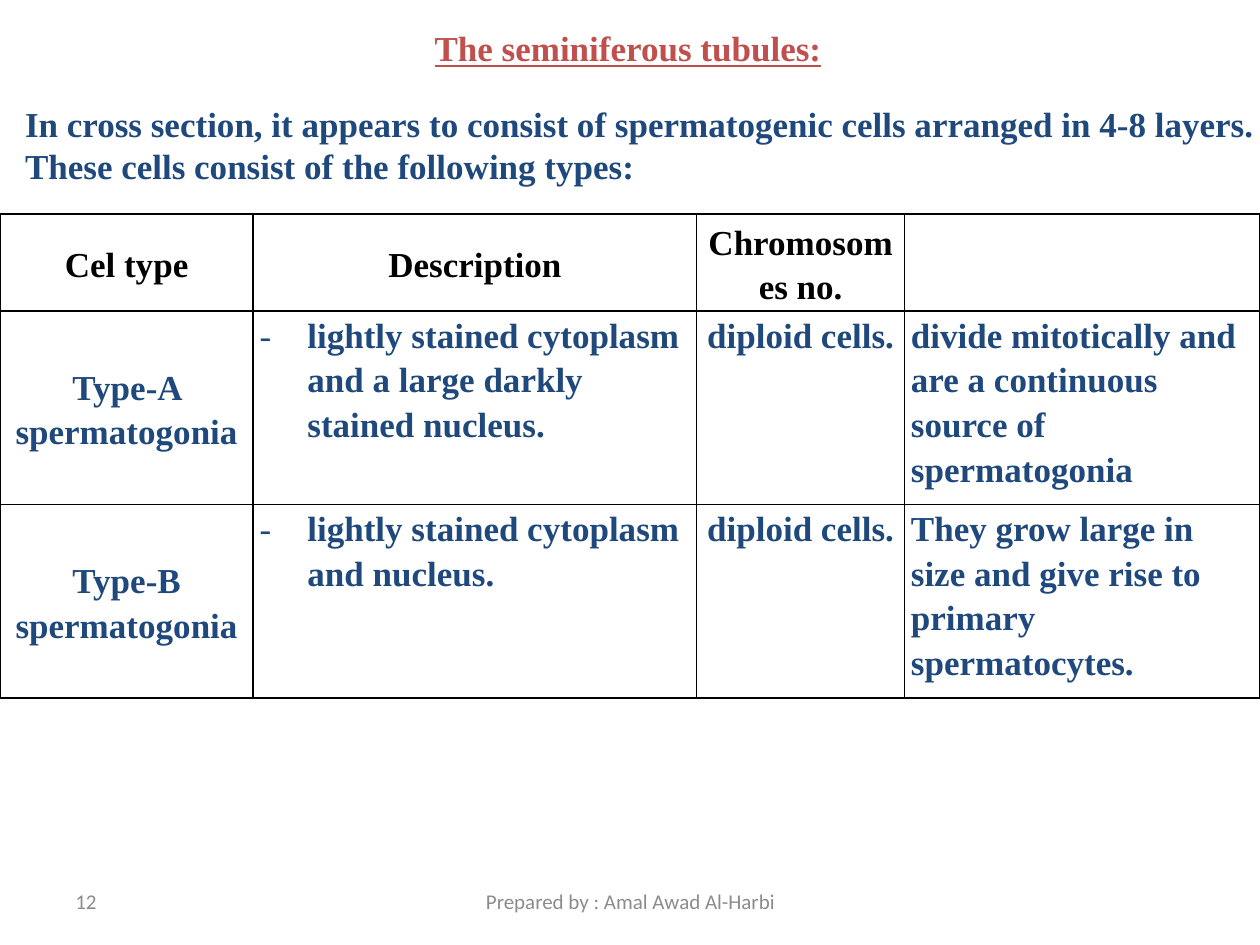
from lxml.etree import SubElement
from pptx import Presentation
from pptx.dml.color import RGBColor
from pptx.enum.text import MSO_ANCHOR, PP_ALIGN
from pptx.oxml import parse_xml
from pptx.oxml.ns import nsdecls, qn
from pptx.util import Inches, Pt

SERIF = "Times New Roman"
BLACK, NAVY, RED, GRAY = "000000", "1F497D", "C0504D", "8C8C8C"
COLS = [2.01, 3.52, 1.65, 2.82]
ROWS = [0.77, 1.53, 1.53]
CELLS = [
    ["Cel type", "Description", "Chromosomes no.", ""],
    ["Type-A spermatogonia",
     "lightly stained cytoplasm and a large darkly stained nucleus.",
     "diploid cells.",
     "divide mitotically and are a continuous source of spermatogonia"],
    ["Type-B spermatogonia",
     "lightly stained cytoplasm and nucleus.",
     "diploid cells.",
     "They grow large in size and give rise to primary spermatocytes."],
]


def rgb(color):
    return RGBColor.from_string(color)


def style(p, size, color, name=SERIF, bold=True, underline=False):
    for r in p.runs:
        font = r.font
        font.size, font.name, font.bold = Pt(size), name, bold
        font.color.rgb = rgb(color)
        if underline:
            font.underline = True


def add_text(s, box, text, size, color, align=PP_ALIGN.LEFT, wrap=True, **font):
    tf = s.shapes.add_textbox(*map(Inches, box)).text_frame
    tf.word_wrap = wrap
    tf.vertical_anchor = MSO_ANCHOR.MIDDLE
    tf.text = text
    for p in tf.paragraphs:
        p.alignment = align
        style(p, size, color, **font)


def add_dash(p):
    pPr = p._p.get_or_add_pPr()
    pPr.set("marL", str(Inches(0.38)))
    pPr.set("indent", str(-Inches(0.38)))
    SubElement(pPr, qn("a:buFont"), typeface=SERIF)
    SubElement(pPr, qn("a:buChar"), char="-")


def add_borders(cell):
    tcPr = cell._tc.get_or_add_tcPr()
    for i, side in enumerate("LRTB"):
        tcPr.insert(i, parse_xml(
            f'<a:ln{side} {nsdecls("a")} w="{Pt(1)}"><a:solidFill>'
            f'<a:srgbClr val="{BLACK}"/></a:solidFill></a:ln{side}>'))


def fill_cell(cell, text, row, col):
    cell.fill.background()
    add_borders(cell)
    cell.margin_left = cell.margin_right = Inches(0.05)
    cell.margin_top = cell.margin_bottom = 0
    middle = row == 0 or col == 0
    cell.vertical_anchor = MSO_ANCHOR.MIDDLE if middle else MSO_ANCHOR.TOP
    p = cell.text_frame.paragraphs[0]
    p.text = text
    p.alignment = PP_ALIGN.CENTER if middle or col == 2 else PP_ALIGN.LEFT
    p.line_spacing = 1.15
    if row and col == 1:
        add_dash(p)
    style(p, 20, BLACK if row == 0 else NAVY)


def add_cell_table(s, box):
    table = s.shapes.add_table(len(ROWS), len(COLS), *map(Inches, box)).table
    table.first_row = table.horz_banding = False
    for column, width in zip(table.columns, COLS):
        column.width = Inches(width)
    for row, height in zip(table.rows, ROWS):
        row.height = Inches(height)
    for i, texts in enumerate(CELLS):
        for j, text in enumerate(texts):
            fill_cell(table.cell(i, j), text, i, j)


def add_heading(s):
    add_text(s, (3.35, 0.16, 3.31, 0.44), "The seminiferous tubules:",
             20, RED, underline=True)
    add_text(s, (0.1, 0.76, 10.02, 0.77),
             "In cross section, it appears to consist of spermatogenic cells "
             "arranged in 4-8 layers.\n"
             "These cells consist of the following types:",
             20, NAVY, wrap=False)


def add_footer(s, top, height):
    font = dict(name="Calibri", bold=False)
    add_text(s, (0.5, top, 2.33, height), "12", 12, GRAY, **font)
    add_text(s, (3.42, top, 3.17, height), "Prepared by : Amal Awad Al-Harbi",
             12, GRAY, PP_ALIGN.CENTER, **font)


def main():
    prs = Presentation()
    prs.slide_width, prs.slide_height = Inches(10), Inches(7.5)
    s = prs.slides.add_slide(prs.slide_layouts[6])
    add_heading(s)
    add_cell_table(s, (0, 1.7, sum(COLS), sum(ROWS)))
    add_footer(s, 6.95, 0.4)
    prs.save("out.pptx")


if __name__ == "__main__":
    main()
